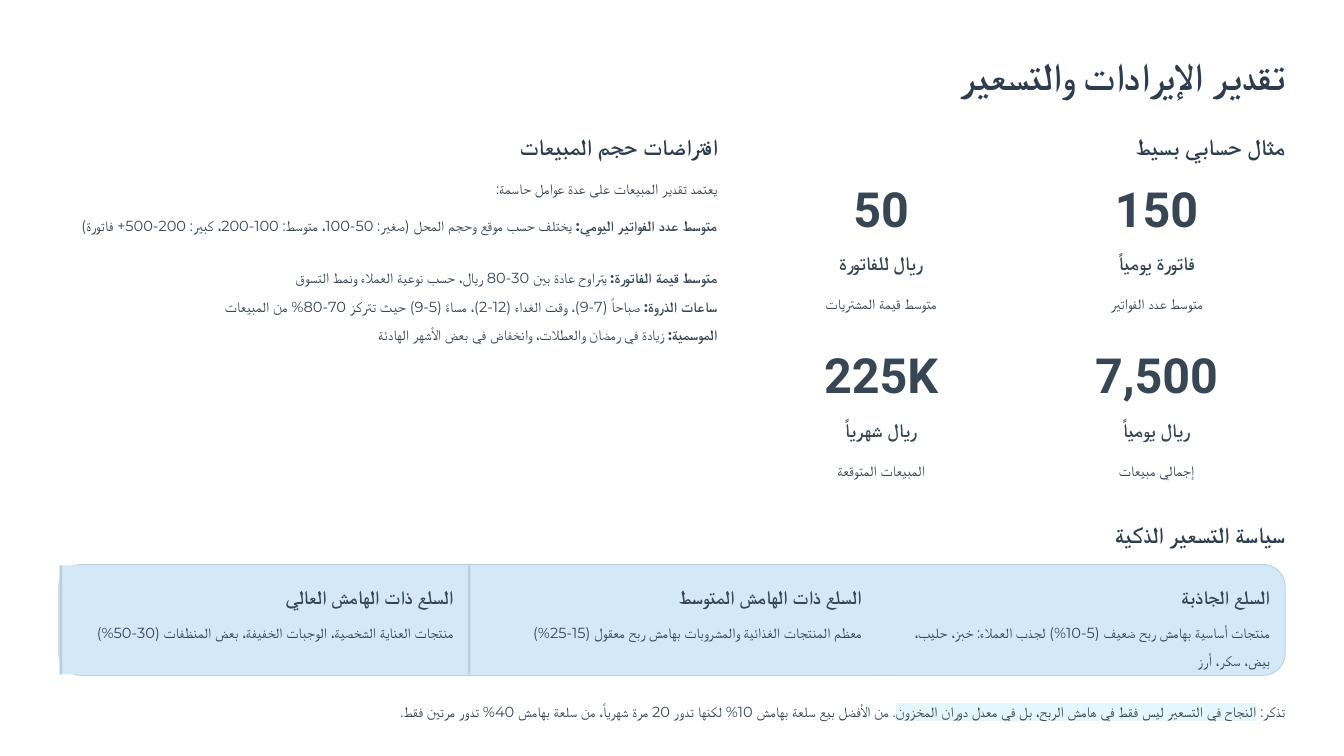
from lxml import etree
from pptx import Presentation, util as u
from pptx.dml.color import RGBColor
from pptx.enum import shapes, text
from pptx.oxml.ns import qn

WIDTH, HEIGHT, MARGIN = 16, 9, 0.7
RIGHT = WIDTH - MARGIN
INK, DARK, PALE, EDGE, MARK = "384653", "2E3C4E", "D4E9F7", "BACFDD", "E5F6FF"
RIGHT_ALIGN, CENTER = text.PP_ALIGN.RIGHT, text.PP_ALIGN.CENTER

# style: font, size, colour, bold, line spacing, box height
STYLES = {
    "title": ("Roboto", 33, DARK, True, 1.26, 0.58),
    "heading": ("Roboto", 19.5, DARK, True, 1.26, 0.35),
    "figure": ("Roboto", 41.5, INK, True, 1.0, 0.58),
    "label": ("Roboto", 16.5, INK, True, 1.24, 0.29),
    "body": ("Montserrat", 12.5, INK, False, 1.6, 0.28),
}

deck = Presentation()
deck.slide_width, deck.slide_height = u.Inches(WIDTH), u.Inches(HEIGHT)
page = deck.slides.add_slide(deck.slide_layouts[6])


def write(style, right, top, width, spans, align=RIGHT_ALIGN, lines=1):
    """Right-to-left text ending at `right`; spans are (words, bold, highlight)."""
    face, size, colour, bold, spacing, height = STYLES[style]
    box = page.shapes.add_textbox(u.Inches(right - width), u.Inches(top),
                                  u.Inches(width), u.Inches(height * lines))
    frame = box.text_frame
    frame.word_wrap = True
    frame.margin_left = frame.margin_right = frame.margin_top = frame.margin_bottom = 0
    para = frame.paragraphs[0]
    para.alignment, para.line_spacing = align, spacing
    para._p.get_or_add_pPr().set("rtl", "1")
    font = para.font
    font.name, font.size, font.bold = face, u.Pt(size), bold
    font.color.rgb = RGBColor.from_string(colour)
    etree.SubElement(font._element, qn("a:cs"), typeface=face)
    for words, strong, highlight in spans:
        span = para.add_run()
        span.text = words
        if strong:
            span.font.bold = True
        if highlight:
            mark = etree.SubElement(span._r.get_or_add_rPr(), qn("a:highlight"))
            etree.SubElement(mark, qn("a:srgbClr"), val=highlight)


def panel(kind, left, top, width, height, fill, radius=None, line=None):
    shape = page.shapes.add_shape(kind, u.Inches(left), u.Inches(top),
                                  u.Inches(width), u.Inches(height))
    shape.shadow.inherit = False
    shape.fill.solid()
    shape.fill.fore_color.rgb = RGBColor.from_string(fill)
    if radius is not None:
        shape.adjustments[0] = radius
    if line:
        shape.line.color.rgb = RGBColor.from_string(line)
        shape.line.width = u.Pt(0.75)
    else:
        shape.line.fill.background()


# Title and section headings
ASSUMPTIONS_RIGHT = 8.54
write("title", RIGHT, 0.48, 4.61, [("تقدير الإيرادات والتسعير", False, None)])
for heading, right, top in [
    ("افتراضات حجم المبيعات", ASSUMPTIONS_RIGHT, 1.5),
    ("مثال حسابي بسيط", RIGHT, 1.5),
    ("سياسة التسعير الذكية", RIGHT, 6.11),
]:
    write("heading", right, top, 2.77, [(heading, False, None)])

# Sales assumptions
assumptions = [
    (2.02, 1, "", "يعتمد تقدير المبيعات على عدة عوامل حاسمة:"),
    (2.46, 2, "متوسط عدد الفواتير اليومي:",
     " يختلف حسب موقع وحجم المحل (صغير: 50-100، متوسط: 100-200، كبير: 200-500+ فاتورة)"),
    (3.08, 1, "متوسط قيمة الفاتورة:", " يتراوح عادة بين 30-80 ريال، حسب نوعية العملاء ونمط التسوق"),
    (3.42, 1, "ساعات الذروة:",
     " صباحاً (7-9)، وقت الغداء (12-2)، مساءً (5-9) حيث تتركز 70-80% من المبيعات"),
    (3.76, 1, "الموسمية:", " زيادة في رمضان والعطلات، وانخفاض في بعض الأشهر الهادئة"),
]
for top, lines, term, detail in assumptions:
    spans = [(term, True, None)] if term else []
    write("body", ASSUMPTIONS_RIGHT, top, ASSUMPTIONS_RIGHT - MARGIN,
          spans + [(detail, False, None)], lines=lines)

# Worked example: two by two figures, filled from the right
FIGURE_WIDTH, LABEL_WIDTH, COLUMN_STEP, ROW_STEP = 3.06, 2.31, 3.28, 1.98
figures = [
    ("150", "فاتورة يومياً", "متوسط عدد الفواتير"),
    ("50", "ريال للفاتورة", "متوسط قيمة المشتريات"),
    ("7,500", "ريال يومياً", "إجمالي مبيعات"),
    ("225K", "ريال شهرياً", "المبيعات المتوقعة"),
]
for index, (figure, label, note) in enumerate(figures):
    row, column = divmod(index, 2)
    right, top = RIGHT - column * COLUMN_STEP, 2.13 + row * ROW_STEP
    inset = (FIGURE_WIDTH - LABEL_WIDTH) / 2
    write("figure", right, top, FIGURE_WIDTH, [(figure, False, None)], CENTER)
    write("label", right - inset, top + 0.8, LABEL_WIDTH, [(label, False, None)], CENTER)
    write("body", right, top + 1.26, FIGURE_WIDTH, [(note, False, None)], CENTER)

# Pricing policy: three cells inside one rounded band
ROUND, PLAIN = shapes.MSO_SHAPE.ROUNDED_RECTANGLE, shapes.MSO_SHAPE.RECTANGLE
BAND_TOP, CELL_WIDTH, CELL_HEIGHT, BORDER, PAD = 6.72, 4.86, 1.3, 0.01, 0.17
panel(ROUND, MARGIN, BAND_TOP, RIGHT - MARGIN, 1.32, PALE, 0.2, EDGE)
policies = [
    ("السلع الجاذبة", 2.31,
     "منتجات أساسية بهامش ربح ضعيف (5-10%) لجذب العملاء: خبز، حليب، بيض، سكر، أرز"),
    ("السلع ذات الهامش المتوسط", 2.56, "معظم المنتجات الغذائية والمشروبات بهامش ربح معقول (15-25%)"),
    ("السلع ذات الهامش العالي", 2.31,
     "منتجات العناية الشخصية، الوجبات الخفيفة، بعض المنظفات (30-50%)"),
]
for column, (name, name_width, detail) in enumerate(policies):
    right = RIGHT - BORDER - column * CELL_WIDTH
    left, top = right - CELL_WIDTH, BAND_TOP + BORDER
    if column == 0:
        panel(ROUND, left, top, CELL_WIDTH, CELL_HEIGHT, PALE, 0.2)
    else:
        panel(PLAIN, left, top, CELL_WIDTH, CELL_HEIGHT, PALE)
        panel(ROUND, left, top, 0.03, CELL_HEIGHT, EDGE, 0.5)
    write("label", right - PAD, top + 0.17, name_width, [(name, False, None)])
    write("body", right - PAD, top + 0.57, 4.51, [(detail, False, None)], lines=2)

# Closing reminder
write("body", RIGHT, 8.24, RIGHT - MARGIN, [
    ("تذكر: ", False, None),
    ("النجاح في التسعير ليس فقط في هامش الربح، بل في معدل دوران المخزون", False, MARK),
    (". من الأفضل بيع سلعة بهامش 10% لكنها تدور 20 مرة شهرياً، من سلعة بهامش 40% تدور مرتين فقط.",
     False, None),
])

deck.save("out.pptx")
